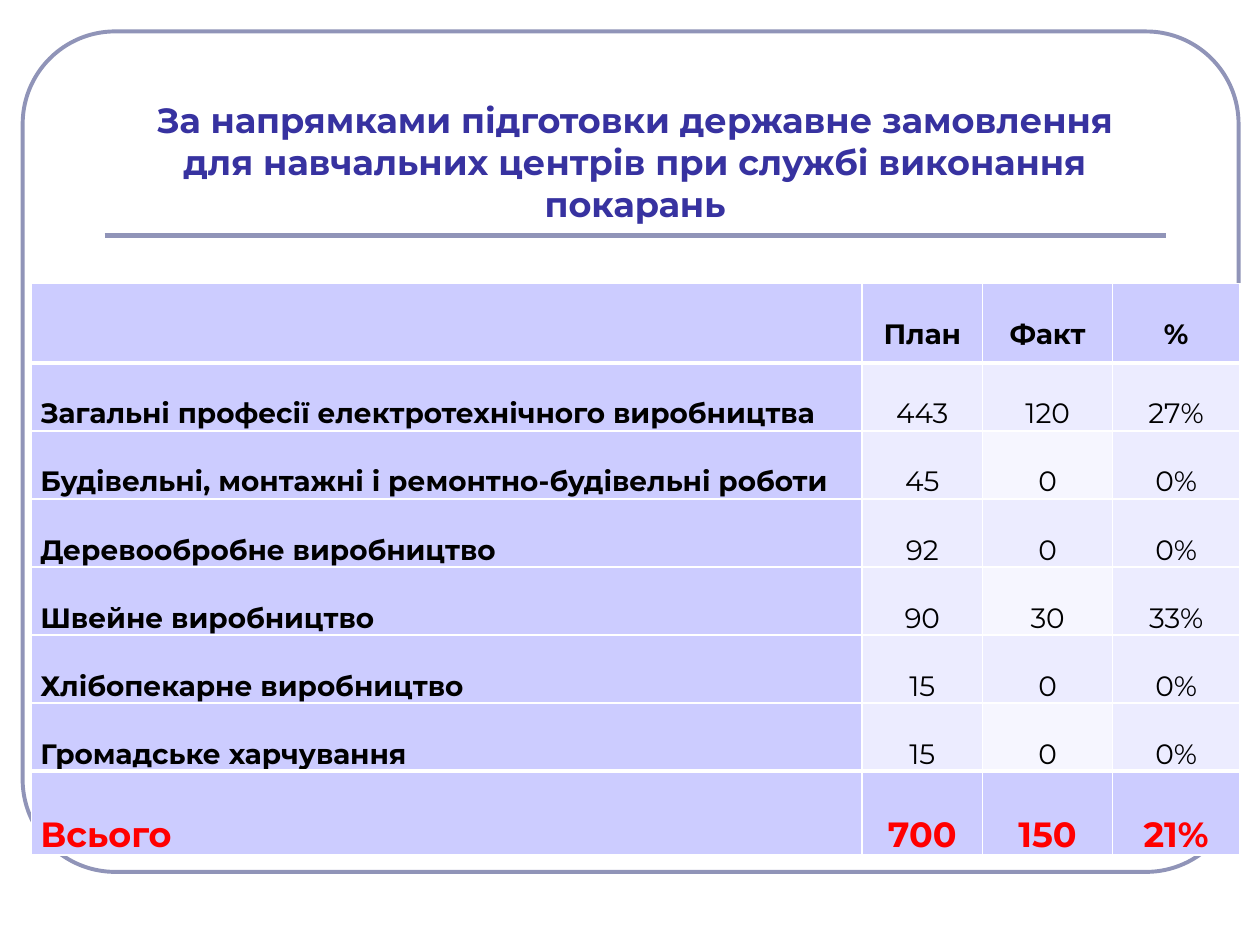
from typing import NamedTuple

from lxml import etree
from pptx import Presentation
from pptx.dml.color import RGBColor
from pptx.enum import shapes, text
from pptx.oxml import ns
from pptx.util import Inches, Pt

FONT = "Montserrat"
FRAME = RGBColor(0x90, 0x94, 0xB8)
TITLE = RGBColor(0x37, 0x32, 0xA0)
BLACK = RGBColor(0x00, 0x00, 0x00)
RED = RGBColor(0xFF, 0x00, 0x00)
WHITE = RGBColor(0xFF, 0xFF, 0xFF)
HEADING_FILL = RGBColor(0xCC, 0xCC, 0xFF)
BODY_FILL = RGBColor(0xEC, 0xEC, 0xFF)
PALE_FILL = RGBColor(0xF6, 0xF6, 0xFF)

COLUMN_WIDTHS = (6.59, 0.96, 1.03, 1.01)
HEADER_HEIGHT, BODY_HEIGHT, TOTAL_HEIGHT = 0.63, 0.54, 0.66


class Row(NamedTuple):
    name: str
    plan: str
    fact: str
    percent: str


ROWS = (
    Row("", "План", "Факт", "%"),
    Row("Загальні професії електротехнічного виробництва", "443", "120", "27%"),
    Row("Будівельні, монтажні і ремонтно-будівельні роботи", "45", "0", "0%"),
    Row("Деревообробне виробництво", "92", "0", "0%"),
    Row("Швейне виробництво", "90", "30", "33%"),
    Row("Хлібопекарне виробництво", "15", "0", "0%"),
    Row("Громадське харчування", "15", "0", "0%"),
    Row("Всього", "700", "150", "21%"),
)
LAST = len(ROWS) - 1


def add_run(paragraph, words: str, size: float, color: RGBColor, bold: bool) -> None:
    run = paragraph.add_run()
    run.text = words
    run.font.name = FONT
    run.font.size = Pt(size)
    run.font.bold = bold
    run.font.color.rgb = color


def set_borders(cell, top: float, bottom: float) -> None:
    """Give the cell white borders; the side ones are 1 pt wide."""
    properties = cell._tc.get_or_add_tcPr()
    widths = {"lnL": 1, "lnR": 1, "lnT": top, "lnB": bottom}
    for position, (tag, width) in enumerate(widths.items()):
        line = etree.Element(ns.qn(f"a:{tag}"), w=str(Pt(width)))
        fill = etree.SubElement(line, ns.qn("a:solidFill"))
        etree.SubElement(fill, ns.qn("a:srgbClr"), val=str(WHITE))
        properties.insert(position, line)


def add_frame(slide) -> None:
    frame = slide.shapes.add_shape(
        shapes.MSO_SHAPE.ROUNDED_RECTANGLE,
        Inches(0.18), Inches(0.25), Inches(9.65), Inches(6.67),
    )
    frame.adjustments[0] = 0.11
    frame.shadow.inherit = False
    frame.fill.background()
    frame.line.color.rgb = FRAME
    frame.line.width = Pt(2.25)

    rule = slide.shapes.add_connector(
        shapes.MSO_CONNECTOR.STRAIGHT,
        Inches(0.83), Inches(1.87), Inches(9.25), Inches(1.87),
    )
    rule.line.color.rgb = FRAME
    rule.line.width = Pt(3)
    etree.SubElement(rule._element.spPr, ns.qn("a:effectLst"))


def add_title(slide, words: str) -> None:
    box = slide.shapes.add_textbox(Inches(0.83), Inches(0.58), Inches(8.42), Inches(1.25))
    frame = box.text_frame
    frame.word_wrap = True
    frame.vertical_anchor = text.MSO_ANCHOR.BOTTOM
    paragraph = frame.paragraphs[0]
    paragraph.alignment = text.PP_ALIGN.CENTER
    add_run(paragraph, words, 20, TITLE, True)


def cell_fill(row: int, column: int) -> RGBColor:
    if row in (0, LAST) or column == 0:
        return HEADING_FILL
    return PALE_FILL if column == 2 and row % 2 == 0 else BODY_FILL


def fill_cell(cell, words: str, row: int, column: int) -> None:
    cell.margin_left = cell.margin_right = Inches(0.07)
    cell.margin_top = cell.margin_bottom = 0
    cell.fill.solid()
    cell.fill.fore_color.rgb = cell_fill(row, column)
    set_borders(
        cell,
        top=3 if row in (1, LAST) else 1,
        bottom=3 if row in (0, LAST - 1) else 1,
    )
    if words:
        paragraph = cell.text_frame.paragraphs[0]
        paragraph.alignment = text.PP_ALIGN.CENTER if column else text.PP_ALIGN.LEFT
        paragraph.line_spacing = 2.0
        is_total = row == LAST
        bold = row in (0, LAST) or column == 0
        add_run(paragraph, words, 20 if is_total else 16, RED if is_total else BLACK, bold)


def add_orders_table(slide) -> None:
    heights = [HEADER_HEIGHT] + [BODY_HEIGHT] * (LAST - 1) + [TOTAL_HEIGHT]
    table = slide.shapes.add_table(
        len(ROWS), len(COLUMN_WIDTHS), Inches(0.25), Inches(2.25),
        Inches(sum(COLUMN_WIDTHS)), Inches(sum(heights)),
    ).table
    for column, width in zip(table.columns, COLUMN_WIDTHS):
        column.width = Inches(width)
    for row, height in zip(table.rows, heights):
        row.height = Inches(height)
    for row, values in enumerate(ROWS):
        for column, words in enumerate(values):
            fill_cell(table.cell(row, column), words, row, column)


def main() -> None:
    presentation = Presentation()
    presentation.slide_width = Inches(10)
    presentation.slide_height = Inches(7.5)
    slide = presentation.slides.add_slide(presentation.slide_layouts[6])
    add_frame(slide)
    add_title(
        slide,
        "За напрямками підготовки державне замовлення "
        "для навчальних центрів при службі виконання покарань",
    )
    add_orders_table(slide)
    presentation.save("out.pptx")


if __name__ == "__main__":
    main()
